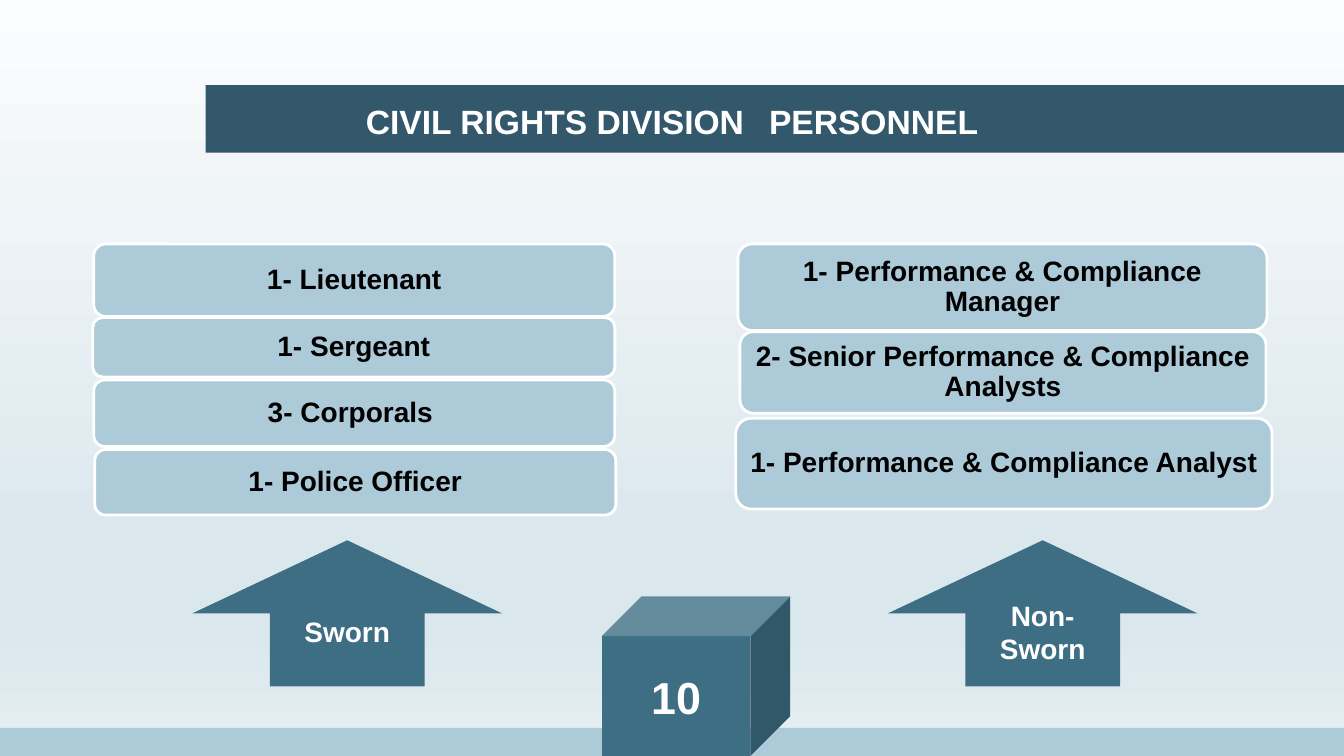
from copy import deepcopy
from dataclasses import dataclass

from pptx import Presentation
from pptx.dml.color import RGBColor
from pptx.enum.shapes import MSO_SHAPE
from pptx.enum.text import MSO_ANCHOR, MSO_AUTO_SIZE, PP_ALIGN
from pptx.oxml.ns import qn
from pptx.shapes.autoshape import Shape
from pptx.slide import Slide
from pptx.util import Pt


@dataclass(frozen=True)
class Theme:
    font: str = "Arial"
    dark: str = "33576B"
    medium: str = "3E6E84"
    light: str = "ACCAD8"
    white: str = "FFFFFF"
    black: str = "000000"
    title_size: float = 24
    body_size: float = 20
    total_size: float = 32
    background: tuple = ((0, "FBFCFD"), (0.74, "DAE7ED"), (0.83, "DAE7ED"), (1, "E6EFF3"))


@dataclass(frozen=True)
class Frame:
    left: float
    top: float
    width: float
    height: float


@dataclass(frozen=True)
class Position:
    text: str
    frame: Frame


@dataclass(frozen=True)
class Label:
    kind: MSO_SHAPE
    frame: Frame
    text: str
    size: float


THEME = Theme()
PAGE_WIDTH, PAGE_HEIGHT = 960, 540
ARROW_TOP, ARROW_WIDTH, ARROW_HEIGHT = 385.92, 221.04, 104.4

POSITIONS = (
    # Sworn
    Position("1- Lieutenant", Frame(66.96, 174.24, 372.24, 51.84)),
    Position("1- Sergeant", Frame(66.24, 226.8, 372.96, 42.48)),
    Position("3- Corporals ", Frame(66.96, 271.44, 372.24, 47.52)),
    Position("1- Police Officer", Frame(67.68, 321.12, 372.24, 46.8)),
    # Non-sworn
    Position("1- Performance & Compliance Manager", Frame(527.04, 174.24, 378, 61.92)),
    Position("2- Senior Performance & Compliance Analysts", Frame(528.48, 236.88, 375.84, 58.32)),
    Position("1- Performance & Compliance Analyst", Frame(525.6, 298.8, 383.04, 64.8)),
)

LABELS = (
    Label(MSO_SHAPE.UP_ARROW, Frame(137.52, ARROW_TOP, ARROW_WIDTH, ARROW_HEIGHT),
          "Sworn", THEME.body_size),
    Label(MSO_SHAPE.UP_ARROW, Frame(634.32, ARROW_TOP, ARROW_WIDTH, ARROW_HEIGHT),
          "Non-Sworn", THEME.body_size),
    Label(MSO_SHAPE.CUBE, Frame(429.84, 426, 134.64, 114), "10", THEME.total_size),
)


def paint_background(page: Slide) -> None:
    fill = page.background.fill
    fill.gradient()
    fill.gradient_angle = 270
    stop_list = next(page.element.iter(qn("a:gsLst")))
    while len(stop_list) < len(THEME.background):
        stop_list.append(deepcopy(stop_list[0]))
    for stop, (place, color) in zip(fill.gradient_stops, THEME.background):
        stop.position = place
        stop.color.rgb = RGBColor.from_string(color)


def place(frame: Frame) -> tuple:
    return Pt(frame.left), Pt(frame.top), Pt(frame.width), Pt(frame.height)


def add_block(page: Slide, kind: MSO_SHAPE, frame: Frame, color: str) -> Shape:
    box = page.shapes.add_shape(kind, *place(frame))
    box.shadow.inherit = False
    box.fill.solid()
    box.fill.fore_color.rgb = RGBColor.from_string(color)
    box.line.fill.background()
    return box


def write(box: Shape, text: str, size: float, color: str) -> None:
    box.text_frame.word_wrap = True
    box.text_frame.text = text
    para = box.text_frame.paragraphs[0]
    para.alignment = PP_ALIGN.CENTER
    for span in para.runs:
        span.font.name = THEME.font
        span.font.size = Pt(size)
        span.font.bold = True
        span.font.color.rgb = RGBColor.from_string(color)


def add_position(page: Slide, position: Position) -> None:
    box = add_block(page, MSO_SHAPE.ROUNDED_RECTANGLE, position.frame, THEME.light)
    box.line.color.rgb = RGBColor.from_string(THEME.white)
    box.line.width = Pt(2)
    write(box, position.text, THEME.body_size, THEME.black)
    text_frame = box.text_frame
    text_frame.vertical_anchor = MSO_ANCHOR.MIDDLE
    text_frame.margin_left = text_frame.margin_right = Pt(6)
    text_frame.margin_top = text_frame.margin_bottom = Pt(3)
    text_frame.paragraphs[0].line_spacing = 0.9


def add_label(page: Slide, label: Label) -> None:
    box = add_block(page, label.kind, label.frame, THEME.medium)
    write(box, label.text, label.size, THEME.white)
    box.text_frame.vertical_anchor = MSO_ANCHOR.MIDDLE


def main() -> None:
    deck = Presentation()
    deck.slide_width, deck.slide_height = Pt(PAGE_WIDTH), Pt(PAGE_HEIGHT)
    page = deck.slides.add_slide(deck.slide_layouts[6])

    # Background and bands
    paint_background(page)
    add_block(page, MSO_SHAPE.RECTANGLE, Frame(146.88, 60.9, 813.12, 48.1), THEME.dark)
    add_block(page, MSO_SHAPE.RECTANGLE, Frame(0, 519.84, PAGE_WIDTH, 20.16), THEME.light)

    # Title
    title = page.shapes.add_textbox(*place(Frame(0, 68.4, PAGE_WIDTH, 36)))
    write(title, "CIVIL RIGHTS DIVISION \tPERSONNEL", THEME.title_size, THEME.white)
    title.text_frame.auto_size = MSO_AUTO_SIZE.SHAPE_TO_FIT_TEXT

    # Staff positions
    for position in POSITIONS:
        add_position(page, position)

    # Group arrows and total
    for label in LABELS:
        add_label(page, label)

    deck.save("out.pptx")


if __name__ == "__main__":
    main()
